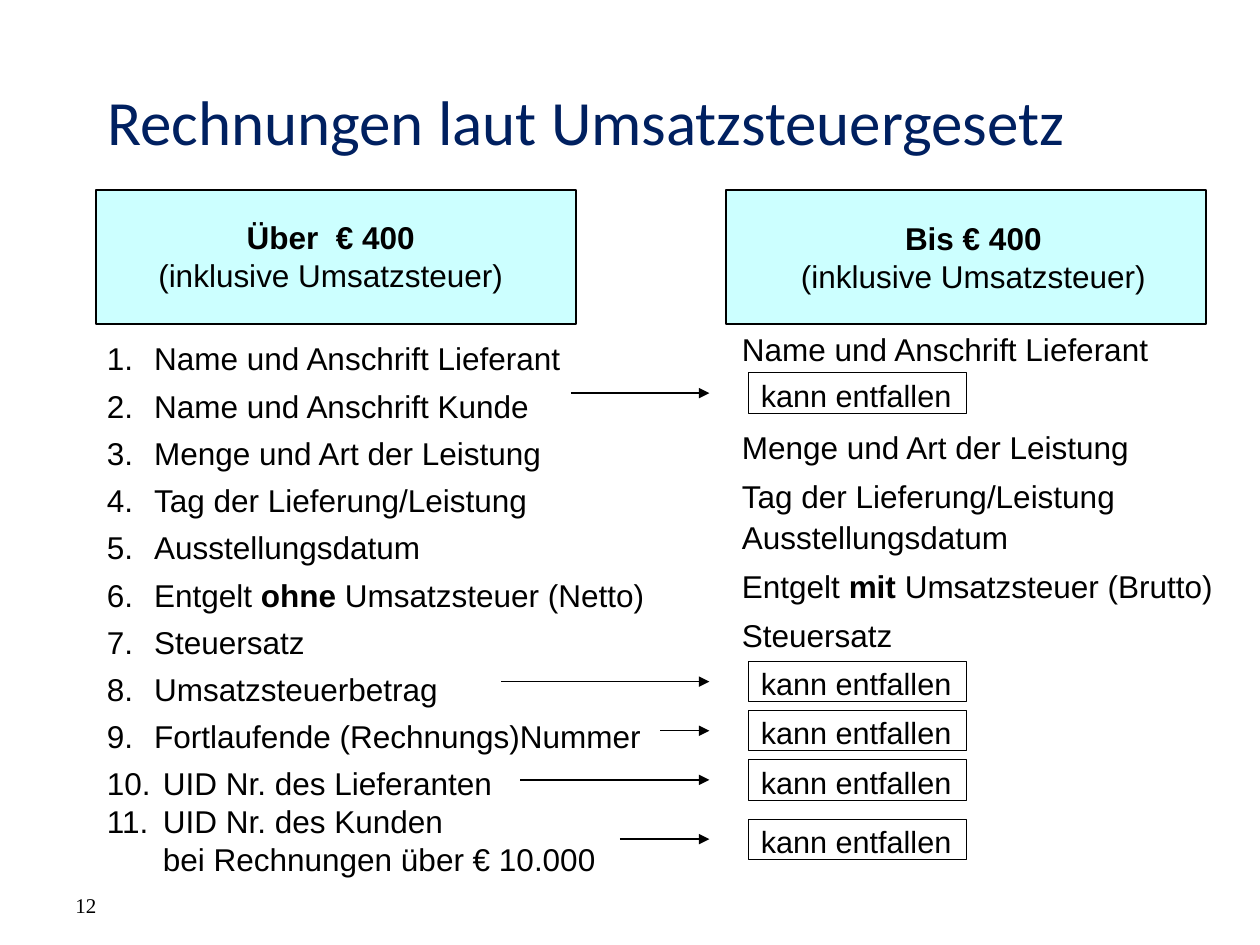
import dataclasses

import pptx
import pptx.dml.color
import pptx.enum.shapes
import pptx.enum.text
import pptx.oxml
import pptx.oxml.ns
import pptx.util

ALIGN = pptx.enum.text.PP_ALIGN
ANCHOR = pptx.enum.text.MSO_ANCHOR


@dataclasses.dataclass(frozen=True)
class Theme:
    ink: str = "000000"
    navy: str = "002060"
    cyan: str = "CCFFFF"
    body: str = "Arial"
    head: str = "Calibri"
    foot: str = "Times New Roman"
    big: float = 36
    size: float = 18
    note: float = 17.5
    small: float = 12


class Board:
    """Draws on one slide over a grid of 100 columns and 75 rows."""

    def __init__(self, deck, theme):
        self.theme = theme
        self.slide = deck.slides.add_slide(deck.slide_layouts[5])
        self.col = deck.slide_width / 100
        self.row = deck.slide_height / 75

    def area(self, x, y, w, h):
        return [round(v) for v in (x * self.col, y * self.row, w * self.col, h * self.row)]

    def color(self, code):
        return pptx.dml.color.RGBColor.from_string(code)

    def fill(self, para, runs, size=None, font=None, color=None):
        for text, bold in runs:
            for i, part in enumerate(text.split("\n")):
                if i:
                    para.add_line_break()
                run = para.add_run()
                run.text = part
                run.font.size = pptx.util.Pt(size or self.theme.size)
                run.font.name = font or self.theme.body
                run.font.bold = bold
                run.font.color.rgb = self.color(color or self.theme.ink)

    def title(self, text, *box):
        shape = self.slide.shapes.title
        shape.left, shape.top, shape.width, shape.height = self.area(*box)
        shape.text_frame.vertical_anchor = ANCHOR.MIDDLE
        para = shape.text_frame.paragraphs[0]
        para.alignment = ALIGN.LEFT
        self.fill(para, [(text, False)], self.theme.big, self.theme.head, self.theme.navy)

    def text(self, lines, *box, align=ALIGN.LEFT, lead=1.0, anchor=ANCHOR.TOP, **style):
        frame = self.slide.shapes.add_textbox(*self.area(*box)).text_frame
        frame.word_wrap = True
        frame.vertical_anchor = anchor
        for i, runs in enumerate(lines):
            para = frame.add_paragraph() if i else frame.paragraphs[0]
            para.alignment = align
            para.line_spacing = 1.0 if i and i == len(lines) - 1 else lead
            self.fill(para, runs, **style)
        return frame

    def count(self, lines, *box):
        for para in self.text(lines, *box, lead=1.25).paragraphs:
            prop = para._p.get_or_add_pPr()
            step = round(3.75 * self.col)
            prop.set("marL", str(step))
            prop.set("indent", str(-step))
            mark = pptx.oxml.ns.qn("a:buAutoNum")
            prop.append(prop.makeelement(mark, {"type": "arabicPeriod"}))

    def rect(self, *box, fill=None, line=1):
        kind = pptx.enum.shapes.MSO_SHAPE.RECTANGLE
        shape = self.slide.shapes.add_shape(kind, *self.area(*box))
        shape.shadow.inherit = False
        if fill:
            shape.fill.solid()
            shape.fill.fore_color.rgb = self.color(fill)
        else:
            shape.fill.background()
        shape.line.color.rgb = self.color(self.theme.ink)
        shape.line.width = pptx.util.Pt(line)
        return shape

    def note(self, text, *box):
        frame = self.rect(*box, line=0.5).text_frame
        frame.margin_top = frame.margin_bottom = 0
        frame.word_wrap = True
        frame.vertical_anchor = ANCHOR.MIDDLE
        para = frame.paragraphs[0]
        para.alignment = ALIGN.LEFT
        para.line_spacing = 1.1
        self.fill(para, [(text, False)], self.theme.note)

    def arrow(self, start, end, y):
        kind = pptx.enum.shapes.MSO_CONNECTOR.STRAIGHT
        ends = self.area(start, y, end, y)
        line = self.slide.shapes.add_connector(kind, *ends)
        line.line.color.rgb = self.color(self.theme.ink)
        line.line.width = pptx.util.Pt(0.75)
        stroke = line.line._get_or_add_ln()
        tail = pptx.oxml.ns.qn("a:tailEnd")
        stroke.append(stroke.makeelement(tail, {"type": "triangle"}))
        prop = line._element.spPr
        prop.append(prop.makeelement(pptx.oxml.ns.qn("a:effectLst"), {}))


def plain(text):
    """Return one run of regular text."""
    return [(text, False)]


def main():
    """Build the slide and save it."""
    deck = pptx.Presentation()
    deck.slide_width = pptx.util.Inches(10)
    deck.slide_height = pptx.util.Inches(7.5)
    theme = Theme()
    board = Board(deck, theme)
    board.title("Rechnungen laut Umsatzsteuergesetz", 7.5, 5.2, 87.5, 8.7)
    board.text([plain("12")], 5, 68.3, 23.3, 5, anchor=ANCHOR.BOTTOM,
               size=theme.small, font=theme.foot)

    heads = [("Über  € 400", 7.6, 11.4, 14.4, 1.8), ("Bis € 400", 57.6, 62.4, 14.2, 1.9)]
    for label, left, x, y, lead in heads:
        board.rect(left, 15.1, 38.1, 10.6, fill=theme.cyan)
        board.text([[(label, True)], plain("(inklusive Umsatzsteuer)")],
                   x, y, 29.7, 9.5, align=ALIGN.CENTER, lead=lead)

    who, what = "Name und Anschrift Lieferant", "Menge und Art der Leistung"
    day, date, rate = "Tag der Lieferung/Leistung", "Ausstellungsdatum", "Steuersatz"
    net = [("Entgelt ", False), ("ohne", True), (" Umsatzsteuer (Netto)", False)]
    gross = [("Entgelt ", False), ("mit", True), (" Umsatzsteuer (Brutto)", False)]
    board.count([
        plain(who), plain("Name und Anschrift Kunde"), plain(what), plain(day), plain(date),
        net, plain(rate), plain("Umsatzsteuerbetrag"),
        plain("Fortlaufende (Rechnungs)Nummer"), plain(" UID Nr. des Lieferanten"),
        plain(" UID Nr. des Kunden \n bei Rechnungen über € 10.000"),
    ], 7.5, 25.7, 45.1, 46.5)

    items = [(plain(who), 25.7), (plain(what), 33.5), (plain(day), 37.4),
             (plain(date), 40.6), (gross, 44.5), (plain(rate), 48.4)]
    for runs, y in items:
        board.text([runs], 57.9, y, 40.2, 4)

    for start, y in [(45.3, 29.6), (39.8, 52.5), (52.4, 56.4), (41.3, 60.3), (49.2, 65)]:
        board.note("kann entfallen", 59.4, y, 17.3, 3.2)
        board.arrow(start, 56.3, y + 1.6)
    deck.save("out.pptx")


if __name__ == "__main__":
    main()
